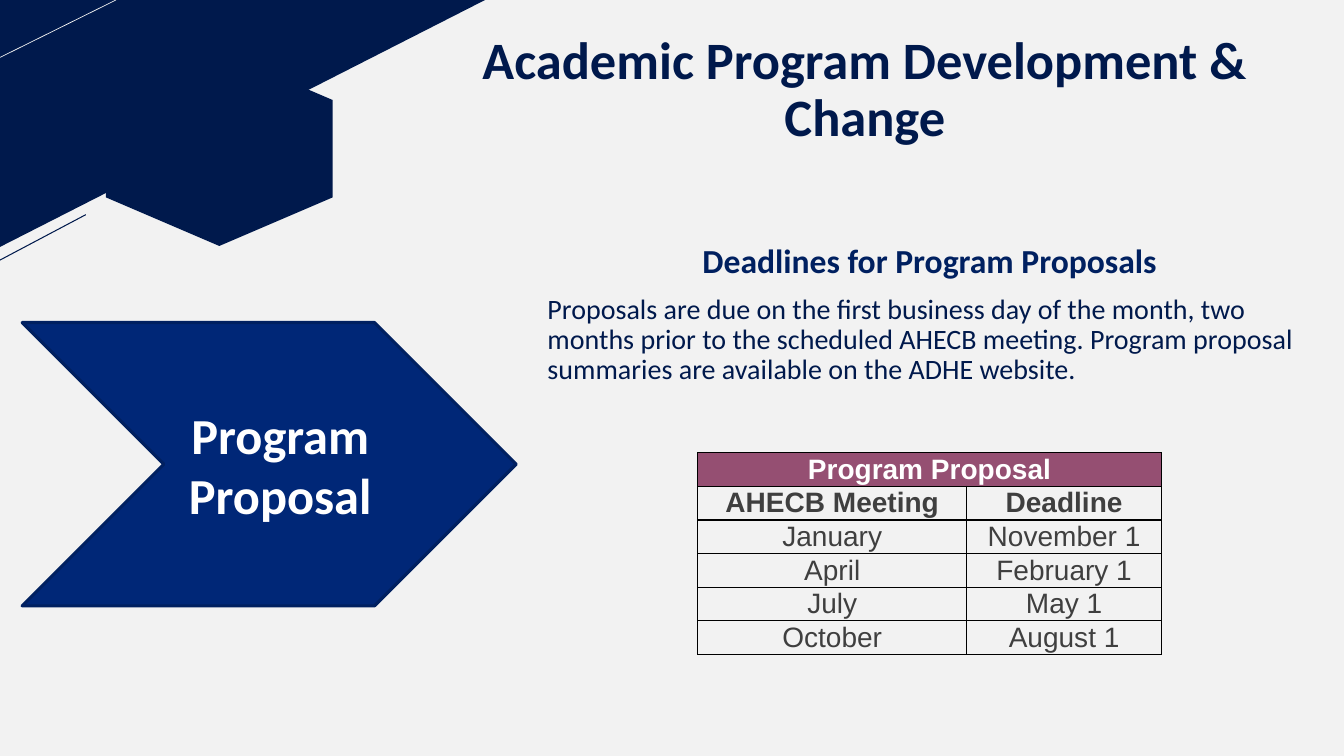
from lxml import etree
from pptx import Presentation
from pptx import util as u
from pptx.dml.color import RGBColor
from pptx.enum import shapes, text
from pptx.oxml.ns import qn

NAVY = RGBColor(0x00, 0x19, 0x4C)
DEEP_BLUE = RGBColor(0x00, 0x20, 0x60)
ROYAL_BLUE = RGBColor(0x00, 0x27, 0x77)
PLUM = RGBColor(0x95, 0x4F, 0x72)
CHARCOAL = RGBColor(0x3F, 0x3F, 0x3F)
PALE_GREY = RGBColor(0xF2, 0xF2, 0xF2)
WHITE = RGBColor(0xFF, 0xFF, 0xFF)
BLACK = RGBColor(0x00, 0x00, 0x00)

WIDTH, HEIGHT = u.Inches(13.33), u.Inches(7.5)
CENTER, LEFT = text.PP_ALIGN.CENTER, text.PP_ALIGN.LEFT
MIDDLE = text.MSO_ANCHOR.MIDDLE

DEADLINES = [
    ("Program Proposal", ""),
    ("AHECB Meeting", "Deadline"),
    ("January", "November 1"),
    ("April", "February 1"),
    ("July", "May 1"),
    ("October", "August 1"),
]


def across(percent):
    return u.Emu(round(WIDTH * percent / 100))


def down(percent):
    return u.Emu(round(HEIGHT * percent / 100))


def area(left, top, width, height):
    """Turn percentages of the slide into a position and size."""
    return across(left), down(top), across(width), down(height)


def write(para, words, size, color, bold=False, align=CENTER, name="Calibri"):
    para.text = words
    para.alignment = align
    para.font.name = name
    para.font.size = u.Pt(size)
    para.font.bold = bold
    para.font.color.rgb = color


def add_box(page, place):
    frame = page.shapes.add_textbox(*area(*place)).text_frame
    frame.word_wrap = True
    return frame


def add_solid(page, kind, place, color):
    solid = page.shapes.add_shape(kind, *area(*place))
    solid.shadow.inherit = False
    solid.fill.solid()
    solid.fill.fore_color.rgb = color
    solid.line.fill.background()
    return solid


def add_line(page, start, end, color, weight):
    line = page.shapes.add_connector(
        shapes.MSO_CONNECTOR.STRAIGHT,
        across(start[0]), down(start[1]), across(end[0]), down(end[1]))
    line.line.color.rgb = color
    line.line.width = u.Pt(weight)
    etree.SubElement(line.element.spPr, qn("a:effectLst"))


def add_corner(page):
    triangle = add_solid(page, shapes.MSO_SHAPE.RIGHT_TRIANGLE,
                         (0, 0, 36.1, 32.67), NAVY)
    triangle.element.spPr.xfrm.set("flipV", "1")
    add_line(page, (0, 7.6), (8.63, 0), PALE_GREY, 0.5)
    add_line(page, (0, 34.4), (6.38, 28.4), NAVY, 0.75)
    hexagon = add_solid(page, shapes.MSO_SHAPE.HEXAGON,
                        (9.08, 4.67, 14.48, 30), NAVY)
    hexagon.rotation = 270


def add_title(page):
    frame = add_box(page, (28.73, 3.33, 71.27, 16.67))
    frame.vertical_anchor = MIDDLE
    frame.margin_bottom = 0
    para = frame.paragraphs[0]
    para.line_spacing = 0.9
    write(para, "Academic Program Development & Change", 37.5, NAVY, bold=True)


def add_body(page):
    frame = add_box(page, (40, 31.73, 58.35, 59.2))
    heading, detail = frame.paragraphs[0], frame.add_paragraph()
    heading.line_spacing = detail.line_spacing = 0.9
    detail.space_before = u.Pt(10)
    write(heading, "Deadlines for Program Proposals", 24, DEEP_BLUE, bold=True)
    write(detail, "Proposals are due on the first business day of the month, "
          "two months prior to the scheduled AHECB meeting. Program proposal "
          "summaries are available on the ADHE website.", 20, NAVY, align=LEFT)


def add_chevron(page):
    chevron = add_solid(page, shapes.MSO_SHAPE.CHEVRON,
                        (1.65, 42.67, 36.76, 37.47), ROYAL_BLUE)
    chevron.line.color.rgb = DEEP_BLUE
    chevron.line.width = u.Pt(2.25)
    frame = chevron.text_frame
    frame.vertical_anchor = MIDDLE
    frame.margin_left, frame.margin_right = u.Inches(0.22), 0
    write(frame.paragraphs[0], "Program", 36, WHITE, bold=True)
    write(frame.add_paragraph(), "Proposal", 36, WHITE, bold=True)


def add_borders(cell):
    properties = cell._tc.get_or_add_tcPr()
    for index, side in enumerate(("a:lnL", "a:lnR", "a:lnT", "a:lnB")):
        border = etree.Element(qn(side), w=str(u.Pt(1)))
        fill = etree.SubElement(border, qn("a:solidFill"))
        etree.SubElement(fill, qn("a:srgbClr"), val=str(BLACK))
        properties.insert(index, border)


def add_deadline_table(page):
    row_height = 4.13
    table = page.shapes.add_table(
        len(DEADLINES), 2,
        *area(51.91, 59.87, 34.51, row_height * len(DEADLINES))).table
    for column, share in zip(table.columns, (20.03, 14.48)):
        column.width = across(share)
    for row_index, labels in enumerate(DEADLINES):
        table.rows[row_index].height = down(row_height)
        for column_index, label in enumerate(labels):
            cell = table.cell(row_index, column_index)
            cell.vertical_anchor = MIDDLE
            cell.margin_left = cell.margin_right = u.Inches(0.07)
            cell.margin_top = cell.margin_bottom = 0
            if row_index == 0:
                cell.fill.solid()
                cell.fill.fore_color.rgb = PLUM
            else:
                cell.fill.background()
            write(cell.text_frame.paragraphs[0], label, 20,
                  WHITE if row_index == 0 else CHARCOAL,
                  bold=row_index < 2, name="Arial")
            add_borders(cell)
    table.cell(0, 0).merge(table.cell(0, 1))


def main():
    deck = Presentation()
    deck.slide_width, deck.slide_height = WIDTH, HEIGHT
    page = deck.slides.add_slide(deck.slide_layouts[6])
    page.background.fill.solid()
    page.background.fill.fore_color.rgb = PALE_GREY
    add_corner(page)
    add_title(page)
    add_body(page)
    add_chevron(page)
    add_deadline_table(page)
    deck.save("out.pptx")


if __name__ == "__main__":
    main()
